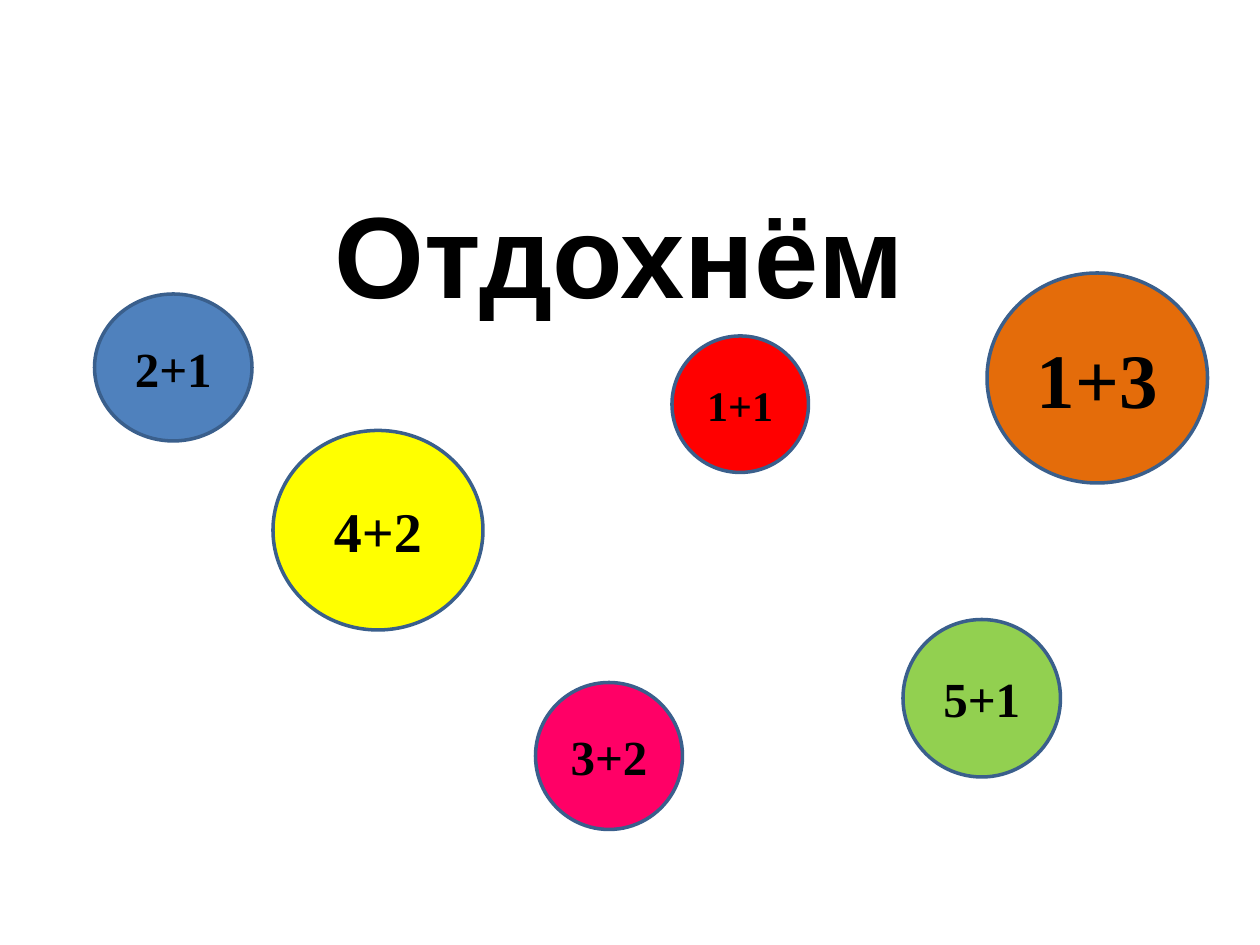
import pptx
import pptx.util
import pptx.dml.color
import pptx.enum.shapes
import pptx.enum.text

Pt = pptx.util.Pt
RGB = pptx.dml.color.RGBColor.from_string

# Content: lengths in points
TITLE = ("Отдохнём", (30, 108, 648, 72))
BALLS = [  # sum, (left, top, width, height), fill, text size
    ("2+1", (54, 168, 90, 84), "blue", "medium"),
    ("4+2", (156, 246, 120, 114), "yellow", "large"),
    ("5+1", (516, 354, 90, 90), "green", "medium"),
    ("1+1", (384, 192, 78, 78), "red", "small"),
    ("1+3", (564, 156, 126, 120), "orange", "huge"),
    ("3+2", (306, 390, 84, 84), "pink", "medium"),
]

THEME = {
    "title_font": "Arial",
    "ball_font": "Times New Roman",
    "colors": {
        "background": "FFFFFF", "text": "000000", "outline": "3A5F8C",
        "blue": "4F81BD", "yellow": "FFFF00", "green": "92D050",
        "red": "FF0000", "orange": "E46C0A", "pink": "FF0066",
    },
    "sizes": {"title": 66, "huge": 44, "large": 32, "medium": 28, "small": 24},
}


def color(name):
    return RGB(THEME["colors"][name])


def write(shape, text, font, size):
    """Put one bold line in the middle of a shape."""
    tf = shape.text_frame
    tf.word_wrap = True
    tf.vertical_anchor = pptx.enum.text.MSO_ANCHOR.MIDDLE
    p = tf.paragraphs[0]
    p.alignment = pptx.enum.text.PP_ALIGN.CENTER
    r = p.add_run()
    r.text = text
    r.font.name = THEME[font]
    r.font.size = Pt(THEME["sizes"][size])
    r.font.bold = True
    r.font.color.rgb = color("text")


def add_ball(s, text, box, fill, size):
    sp = s.shapes.add_shape(pptx.enum.shapes.MSO_SHAPE.OVAL, *map(Pt, box))
    sp.shadow.inherit = False
    sp.fill.solid()
    sp.fill.fore_color.rgb = color(fill)
    sp.line.color.rgb = color("outline")
    sp.line.width = Pt(2)
    write(sp, text, "ball_font", size)


def main():
    prs = pptx.Presentation()
    prs.slide_width, prs.slide_height = Pt(720), Pt(540)
    s = prs.slides.add_slide(prs.slide_layouts[6])
    s.background.fill.solid()
    s.background.fill.fore_color.rgb = color("background")

    # Title
    text, box = TITLE
    write(s.shapes.add_textbox(*map(Pt, box)), text, "title_font", "title")

    # Balls with sums
    for ball in BALLS:
        add_ball(s, *ball)

    prs.save("out.pptx")


if __name__ == "__main__":
    main()
